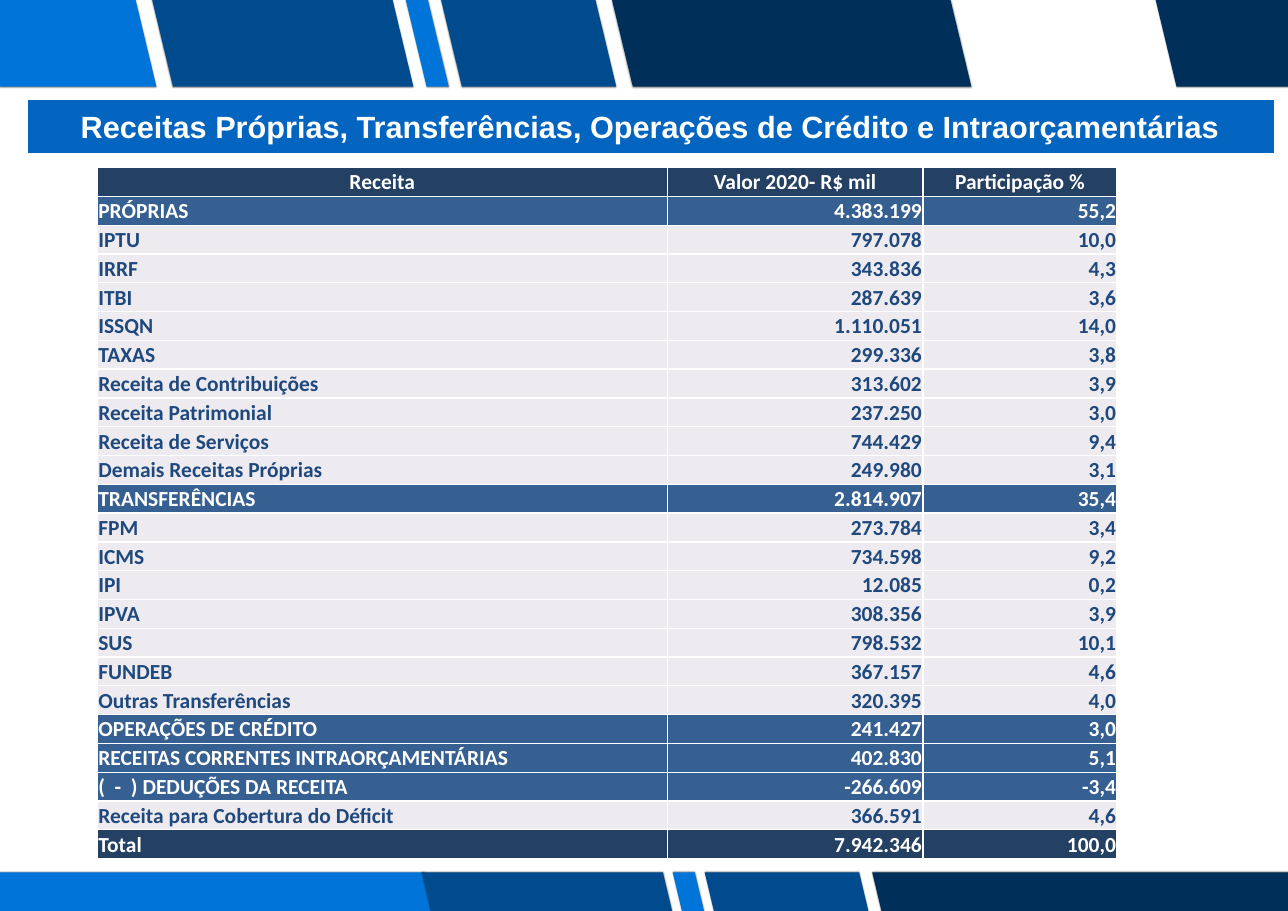
from lxml.etree import SubElement
from pptx import Presentation
from pptx.dml.color import RGBColor
from pptx.enum.text import MSO_ANCHOR, MSO_AUTO_SIZE, PP_ALIGN
from pptx.oxml.ns import qn
from pptx.util import Inches, Pt

WHITE, SKY, BLUE, NAVY = "FFFFFF", "0074D9", "004B8D", "00305A"
TITLE_BLUE, HEADER, GROUP, ITEM, ITEM_TEXT = "0365C0", "244062", "366092", "EDEAF0", "1F497D"

TITLE = "Receitas Próprias, Transferências, Operações de Crédito e Intraorçamentárias"

# Stripes: left and right ends of the upper edge, in % of the width
TOP_STRIPES = [(0, 10.53, SKY), (11.82, 30.48, BLUE), (31.51, 33.22, SKY),
               (34.25, 46.23, BLUE), (47.52, 73.8, NAVY), (89.73, 100, NAVY)]
BOTTOM_STRIPES = [(0, 32.88, SKY), (32.79, 51.46, BLUE), (52.23, 53.94, SKY),
                  (54.71, 66.7, BLUE), (67.72, 100, NAVY)]

REVENUES = [
    ("Receita", "Valor 2020- R$ mil", "Participação %"),
    ("PRÓPRIAS", "4.383.199", "55,2"),
    ("IPTU", "797.078", "10,0"),
    ("IRRF", "343.836", "4,3"),
    ("ITBI", "287.639", "3,6"),
    ("ISSQN", "1.110.051", "14,0"),
    ("TAXAS", "299.336", "3,8"),
    ("Receita de Contribuições", "313.602", "3,9"),
    ("Receita Patrimonial", "237.250", "3,0"),
    ("Receita de Serviços", "744.429", "9,4"),
    ("Demais Receitas Próprias", "249.980", "3,1"),
    ("TRANSFERÊNCIAS", "2.814.907", "35,4"),
    ("FPM", "273.784", "3,4"),
    ("ICMS", "734.598", "9,2"),
    ("IPI", "12.085", "0,2"),
    ("IPVA", "308.356", "3,9"),
    ("SUS", "798.532", "10,1"),
    ("FUNDEB", "367.157", "4,6"),
    ("Outras Transferências", "320.395", "4,0"),
    ("OPERAÇÕES DE CRÉDITO", "241.427", "3,0"),
    ("RECEITAS CORRENTES INTRAORÇAMENTÁRIAS", "402.830", "5,1"),
    ("(  -  ) DEDUÇÕES DA RECEITA", "-266.609", "-3,4"),
    ("Receita para Cobertura do Déficit", "366.591", "4,6"),
    ("Total", "7.942.346", "100,0"),
]
ROW_FILLS = {"Receita": HEADER, "Total": HEADER} | dict.fromkeys(
    ["PRÓPRIAS", "TRANSFERÊNCIAS", "OPERAÇÕES DE CRÉDITO",
     "RECEITAS CORRENTES INTRAORÇAMENTÁRIAS", "(  -  ) DEDUÇÕES DA RECEITA"], GROUP)


def color(hex_text):
    return RGBColor.from_string(hex_text)


class RevenueSlide:
    """Draws on one slide; all lengths are percentages of its size."""

    SLANT = 0.17  # sideways shift of a stripe for each % of height

    def __init__(self, presentation):
        self.width = presentation.slide_width
        self.height = presentation.slide_height
        self.slide = presentation.slides.add_slide(presentation.slide_layouts[5])

    def x(self, share):
        return round(self.width * share / 100)

    def y(self, share):
        return round(self.height * share / 100)

    def label(self, frame, text, font, size, text_color, align):
        frame.text = text
        paragraph = frame.paragraphs[0]
        paragraph.alignment = align
        style = paragraph.runs[0].font
        style.name, style.size, style.bold = font, Pt(size), True
        style.color.rgb = color(text_color)

    def stripe(self, left, right, top, height, fill):
        # Ends on the slide's edge stay upright, the others lean
        low_left, low_right = (end + self.SLANT * height * (0 < end < 100)
                               for end in (left, right))
        outline = self.slide.shapes.build_freeform(self.x(left), self.y(top))
        outline.add_line_segments([
            (self.x(right), self.y(top)),
            (self.x(low_right), self.y(top + height)),
            (self.x(low_left), self.y(top + height))])
        stripe = outline.convert_to_shape()
        stripe.fill.solid()
        stripe.fill.fore_color.rgb = color(fill)
        stripe.line.fill.background()
        stripe.shadow.inherit = False
        effects = stripe.element.spPr.find(qn("a:effectLst"))
        shadow = SubElement(effects, qn("a:outerShdw"), blurRad=str(Pt(1)),
                            dist="0", dir="5400000", rotWithShape="0")
        black = SubElement(shadow, qn("a:srgbClr"), val="000000")
        SubElement(black, qn("a:alpha"), val="50000")

    def title(self, text, left, top, width, height):
        title = self.slide.shapes.title
        title.left, title.top = self.x(left), self.y(top)
        title.width, title.height = self.x(width), self.y(height)
        title.fill.solid()
        title.fill.fore_color.rgb = color(TITLE_BLUE)
        title.line.color.rgb = color(WHITE)
        title.line.width = Pt(0.25)
        frame = title.text_frame
        frame.word_wrap = True
        frame.auto_size = MSO_AUTO_SIZE.NONE
        frame.vertical_anchor = MSO_ANCHOR.MIDDLE
        frame.margin_left = frame.margin_right = Inches(0.03)
        frame.margin_top = frame.margin_bottom = Inches(0.03)
        self.label(frame, text, "Arial", 20, WHITE, PP_ALIGN.CENTER)

    def cell(self, cell, text, fill, align):
        cell.margin_left = cell.margin_right = cell.margin_top = Inches(0.01)
        cell.margin_bottom = 0
        cell.vertical_anchor = MSO_ANCHOR.MIDDLE
        text_color = ITEM_TEXT if fill == ITEM else WHITE
        self.label(cell.text_frame, text, "Calibri", 14, text_color, align)
        properties = cell._tc.get_or_add_tcPr()
        for side in ("lnL", "lnR", "lnT", "lnB"):
            border = SubElement(properties, qn(f"a:{side}"), w=str(Pt(1)))
            SubElement(SubElement(border, qn("a:solidFill")), qn("a:srgbClr"), val=WHITE)
        cell.fill.solid()
        cell.fill.fore_color.rgb = color(fill)

    def table(self, rows, left, top, column_widths, height):
        table = self.slide.shapes.add_table(
            len(rows), len(column_widths), self.x(left), self.y(top),
            self.x(sum(column_widths)), self.y(height)).table
        table.first_row = table.horz_banding = False
        for column, width in zip(table.columns, column_widths):
            column.width = self.x(width)
        for r, values in enumerate(rows):
            table.rows[r].height = self.y(height / len(rows))
            fill = ROW_FILLS.get(values[0], ITEM)
            for c, text in enumerate(values):
                align = PP_ALIGN.RIGHT if c else PP_ALIGN.LEFT
                self.cell(table.cell(r, c), text, fill, align if r else PP_ALIGN.CENTER)


def main():
    presentation = Presentation()
    presentation.slide_width, presentation.slide_height = Inches(11.68), Inches(8.26)
    page = RevenueSlide(presentation)

    # Slanted stripes above and below
    for stripes, top, height in ((TOP_STRIPES, 0, 9.5), (BOTTOM_STRIPES, 95.76, 4.24)):
        for left, right, fill in stripes:
            page.stripe(left, right, top, height, fill)

    # Title bar and revenue table
    page.title(TITLE, 2.1, 10.9, 96.8, 5.9)
    page.table(REVENUES, 7.55, 18.4, (44.26, 19.86, 15.07), 75.9)

    presentation.save("out.pptx")


if __name__ == "__main__":
    main()
